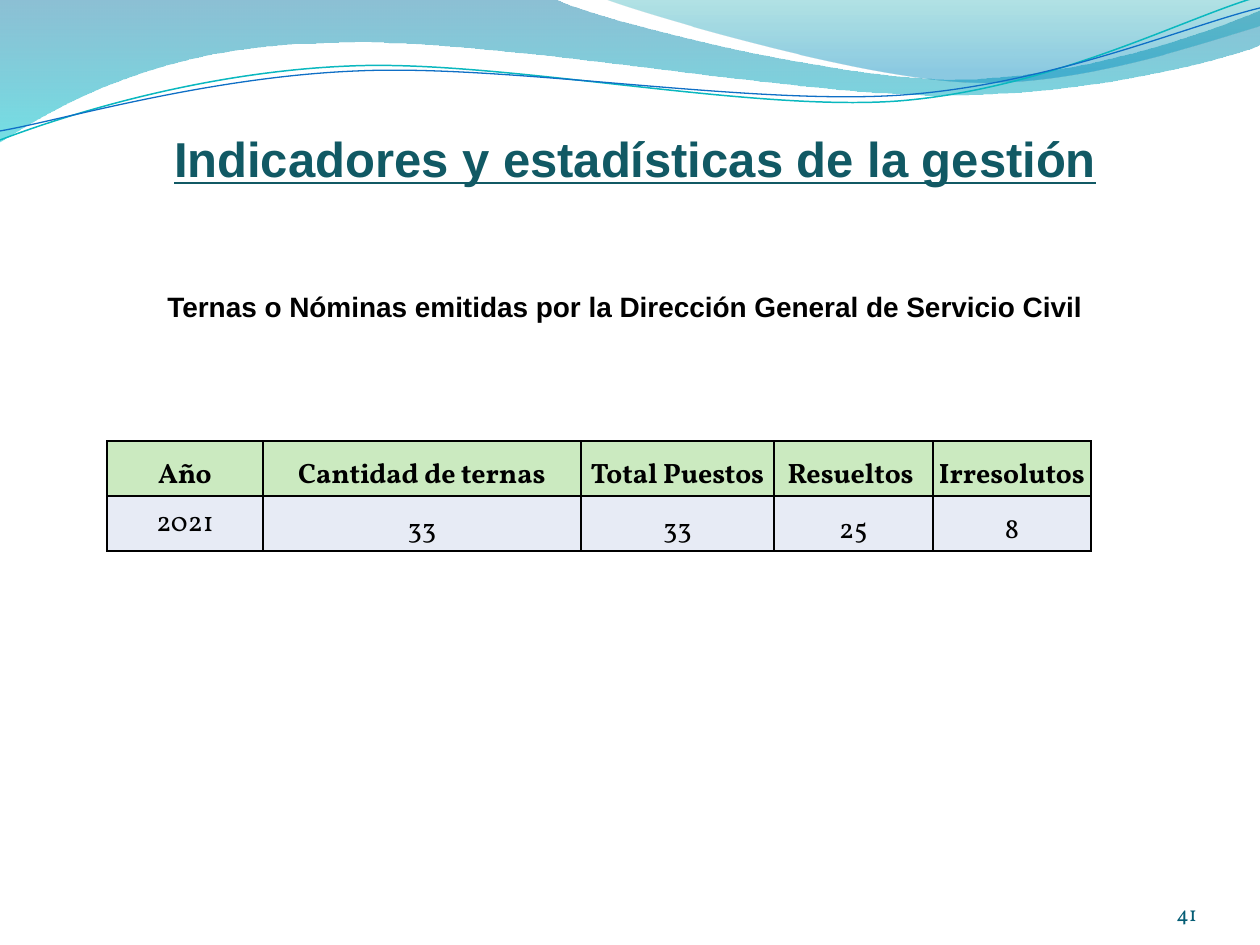
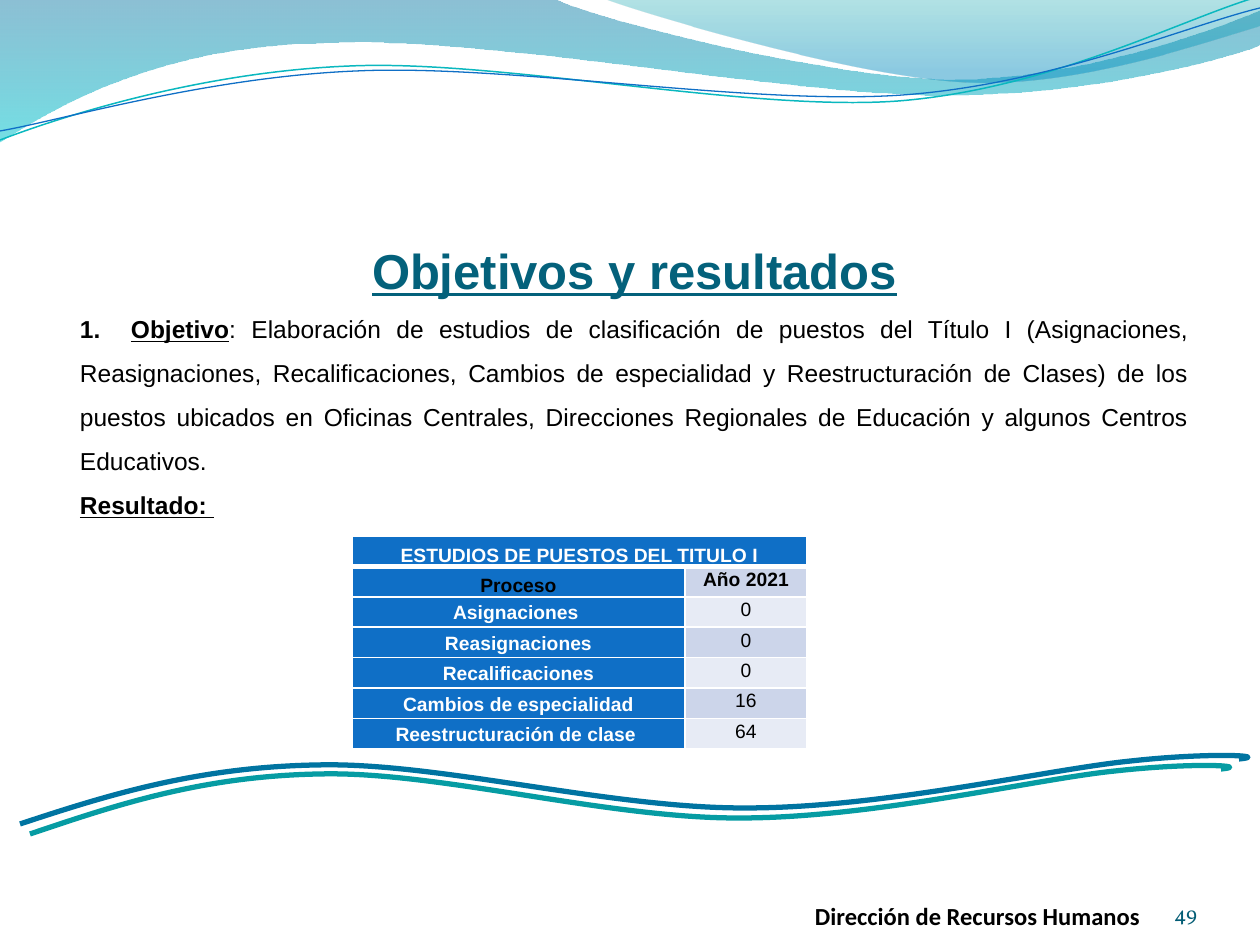
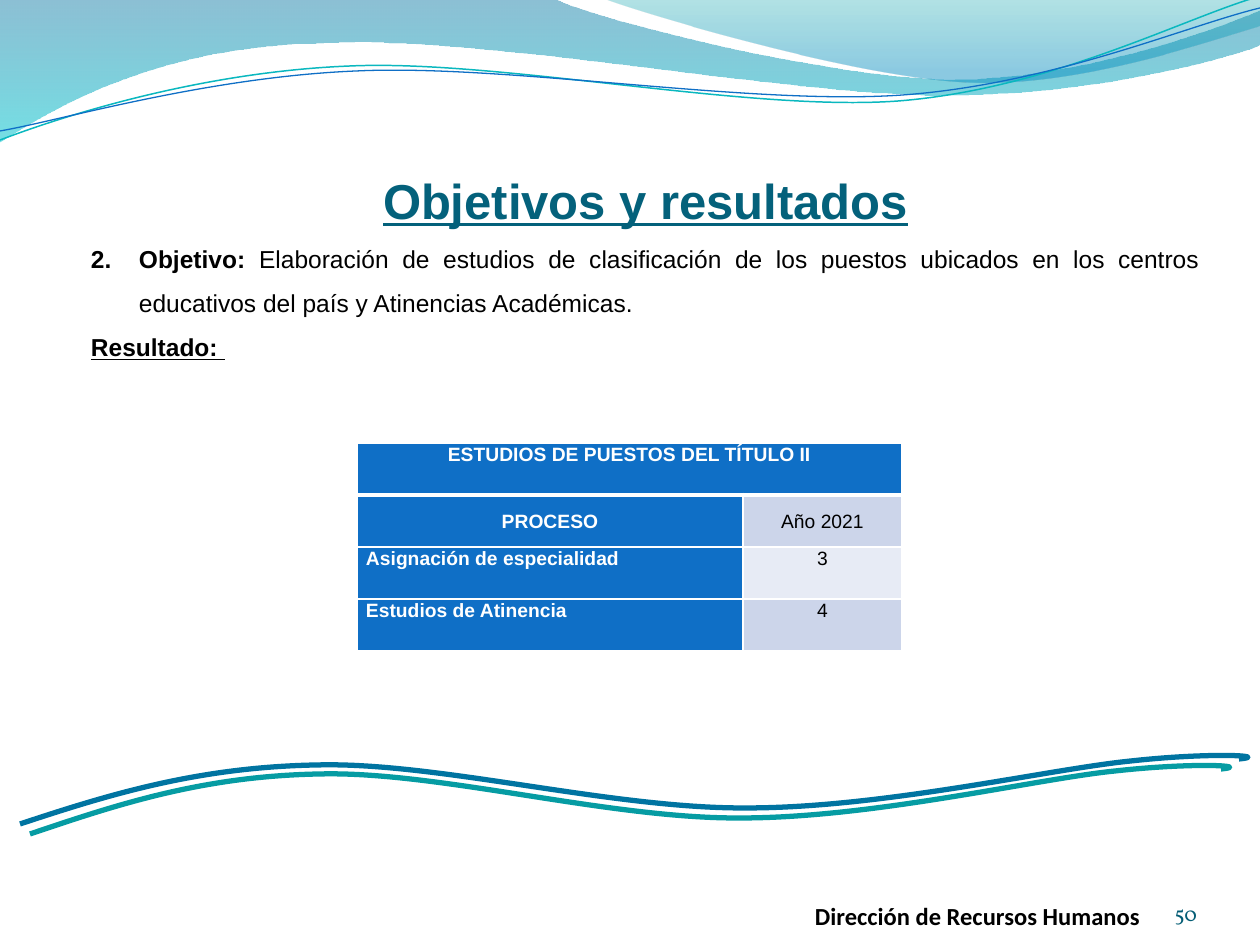
import dataclasses

import lxml.etree
import pptx
import pptx.dml.color
import pptx.enum.shapes
import pptx.enum.text
import pptx.oxml.ns
import pptx.util

ALIGN = pptx.enum.text.PP_ALIGN
ANCHOR = pptx.enum.text.MSO_ANCHOR
EMU_PER_PX = 914400 / 126


@dataclasses.dataclass(frozen=True)
class Theme:
    sans: str = "Arial"
    serif: str = "Vollkorn"
    footer_font: str = "Calibri"
    black: str = "000000"
    white: str = "FFFFFF"
    title: str = "115964"
    heading: str = "04617B"
    number: str = "045D75"
    blue: str = "0F6FC6"
    teal: str = "0AB8BF"
    deep_blue: str = "0074A1"
    deep_teal: str = "069CA3"
    green: str = "CBEAC0"
    band_dark: str = "CCD5EA"
    band_light: str = "E7EBF5"
    back_wave: tuple = ((0, "0074A1", 45), (1, "00C6CF", 55))
    front_wave: tuple = ((0, "00A1A9", 30), (0.8, "008BBF", 45))
    title_size: int = 28
    subtitle_size: int = 16
    body_size: int = 14
    number_size: int = 12
    cell_size: int = 11


THEME = Theme()


@dataclasses.dataclass(frozen=True)
class Cell:
    text: str
    fill: str
    color: str = THEME.black
    bold: bool = False
    anchor: object = ANCHOR.TOP
    align: object = ALIGN.CENTER


@dataclasses.dataclass(frozen=True)
class TableStyle:
    font: str
    size: int
    border: str
    insets: tuple
    line_spacing: float = 1.0
    space_after: int = 0


TERNAS_STYLE = TableStyle(THEME.serif, THEME.subtitle_size, THEME.black, (1, 1, 1, 0))
ESTUDIOS_I_STYLE = TableStyle(THEME.sans, THEME.cell_size, THEME.white, (9, 1, 9, 0), 1.07, 8)
ESTUDIOS_II_STYLE = dataclasses.replace(ESTUDIOS_I_STYLE, insets=(9, 0, 9, 0))

BACK_WAVE = [
    [(0, 0)], [(554, -1)],
    [(600, 21), (837, 79), (955, 79)],
    [(1075, 79), (1207, 33), (1260, 11)],
    [(1261, 45)],
    [(1239, 55), (1096, 96), (940, 95)],
    [(784, 95), (481, 35), (324, 43)],
    [(163, 45), (58, 105), (-1, 142)],
    [(0, 0)],
]
FRONT_WAVE = [
    [(604, -1)],
    [(642, 14), (859, 78), (969, 82)],
    [(1079, 87), (1211, 40), (1260, 26)],
    [(1260, 0)], [(604, -1)],
]
TOP_TEAL_LINE = [
    [(0, 140)],
    [(60, 117), (199, 72), (349, 66)],
    [(498, 59), (747, 112), (898, 101)],
    [(1050, 89), (1182, 19), (1257, -3)],
]
TOP_BLUE_LINE = [
    [(0, 131)],
    [(59, 121), (207, 77), (357, 71)],
    [(508, 64), (752, 106), (903, 95)],
    [(1053, 84), (1186, 26), (1260, 8)],
]
LOW_TEAL_LINE = [
    [(30, 834)],
    [(116, 805), (202, 776), (320, 774)],
    [(438, 771), (609, 819), (741, 818)],
    [(873, 818), (1036, 779), (1115, 771)],
    [(1196, 762), (1252, 766), (1221, 769)],
]
LOW_BLUE_LINE = [
    [(20, 824)],
    [(108, 795), (197, 767), (318, 765)],
    [(438, 762), (612, 809), (747, 808)],
    [(883, 808), (1050, 769), (1131, 761)],
    [(1213, 752), (1271, 756), (1239, 759)],
]


def px(value):
    return pptx.util.Emu(round(value * EMU_PER_PX))


def rgb(color):
    return pptx.dml.color.RGBColor.from_string(color)


def child(parent, tag, **attributes):
    return lxml.etree.SubElement(parent, pptx.oxml.ns.qn(tag), attributes)


def bend(sp, segments):
    lines = iter(list(sp.element.iter(pptx.oxml.ns.qn("a:lnTo"))))
    for segment in segments:
        curve, *controls = [next(lines) for _ in segment]
        if controls:
            curve.tag = pptx.oxml.ns.qn("a:cubicBezTo")
        for line in controls:
            curve.append(line[0])
            line.getparent().remove(line)


def add_freeform(s, segments, close):
    points = [(px(x), px(y)) for segment in segments for x, y in segment]
    builder = s.shapes.build_freeform(*points[0], scale=1.0)
    builder.add_line_segments(points[1:], close=close)
    sp = builder.convert_to_shape()
    sp.shadow.inherit = False
    bend(sp, segments[1:])
    return sp


def add_wave(s, segments, stops):
    sp = add_freeform(s, segments, True)
    sp.line.fill.background()
    sp.fill.gradient()
    sp.fill.gradient_angle = 270
    for stop, (position, color, _) in zip(sp.fill.gradient_stops, stops):
        stop.position = position
        stop.color.rgb = rgb(color)
    colors = list(sp.element.spPr.iter(pptx.oxml.ns.qn("a:srgbClr")))
    for color, (_, _, opacity) in zip(colors, stops):
        child(color, "a:alpha", val=str(opacity * 1000))


def add_curve(s, segments, color, width):
    sp = add_freeform(s, segments, False)
    sp.fill.background()
    sp.line.color.rgb = rgb(color)
    sp.line.width = pptx.util.Pt(width)


def set_insets(target, insets):
    target.margin_left, target.margin_top, target.margin_right, target.margin_bottom = map(px, insets)


def add_text(s, box, insets=(0, 0, 0, 0), anchor=ANCHOR.BOTTOM):
    tf = s.shapes.add_textbox(*map(px, box)).text_frame
    tf.word_wrap = True
    tf.vertical_anchor = anchor
    set_insets(tf, insets)
    return tf


def add_run(p, text, size, color=THEME.black, bold=False, underline=False, font=THEME.sans):
    r = p.add_run()
    r.text = text
    r.font.name = font
    r.font.size = pptx.util.Pt(size)
    r.font.color.rgb = rgb(color)
    r.font.bold = bold
    r.font.underline = underline


def add_paragraph(tf, align, first=False):
    p = tf.paragraphs[0] if first else tf.add_paragraph()
    p.alignment = align
    p.line_spacing = 1.5
    return p


def add_objective(s, box):
    tf = add_text(s, box, (13, 6, 13, 6), ANCHOR.TOP)
    p = add_paragraph(tf, ALIGN.CENTER, first=True)
    add_run(p, "Objetivos y resultados", THEME.title_size, THEME.heading, True, True)
    objective = add_paragraph(tf, ALIGN.JUSTIFY)
    p = add_paragraph(tf, ALIGN.LEFT)
    add_run(p, "Resultado: ", THEME.body_size, bold=True, underline=True)
    return objective


def set_tab(p, position):
    tabs = child(p._p.get_or_add_pPr(), "a:tabLst")
    child(tabs, "a:tab", pos=str(px(position)), algn="l")


def set_number(p, start, indent):
    pPr = p._p.get_or_add_pPr()
    pPr.set("marL", str(px(indent)))
    pPr.set("indent", str(-px(indent)))
    child(pPr, "a:buAutoNum", type="arabicPeriod", startAt=str(start))


def set_borders(cell, color, top, bottom):
    tcPr = cell._tc.get_or_add_tcPr()
    for side, width in (("L", 1), ("R", 1), ("T", top), ("B", bottom)):
        ln = child(tcPr, "a:ln" + side, w=str(pptx.util.Pt(width)))
        child(child(ln, "a:solidFill"), "a:srgbClr", val=color)


def fill_cell(cell, content, style):
    cell.fill.solid()
    cell.fill.fore_color.rgb = rgb(content.fill)
    cell.vertical_anchor = content.anchor
    set_insets(cell, style.insets)
    p = cell.text_frame.paragraphs[0]
    p.alignment = content.align
    p.line_spacing = style.line_spacing
    p.space_after = pptx.util.Pt(style.space_after)
    add_run(p, content.text, style.size, content.color, content.bold, font=style.font)


def add_grid(s, left, top, columns, height, rows, style):
    frame = s.shapes.add_table(len(rows), len(columns), px(left), px(top), px(sum(columns)), px(height))
    table = frame.table
    table.first_row = table.horz_banding = False
    for column, width in zip(table.columns, columns):
        column.width = px(width)
    spanned = len(rows[0]) == 1
    for i, row in enumerate(rows):
        table.rows[i].height = px(height / len(rows))
        for j in range(len(columns)):
            upper = 3 if spanned and i == 1 else 1
            lower = 3 if spanned and i == 0 else 1
            set_borders(table.cell(i, j), style.border, upper, lower)
        for j, content in enumerate(row):
            fill_cell(table.cell(i, j), content, style)
    if spanned:
        table.cell(0, 0).merge(table.cell(0, len(columns) - 1))


def label(text, anchor=ANCHOR.TOP, align=ALIGN.CENTER, color=THEME.white):
    return Cell(text, THEME.blue, color, True, anchor, align)


def process_rows(pairs, anchor, align):
    bands = (THEME.band_light, THEME.band_dark)
    return [[label(name, anchor, align), Cell(value, bands[i % 2])] for i, (name, value) in enumerate(pairs)]


def new_slide(prs, number):
    s = prs.slides.add_slide(prs.slide_layouts[6])
    add_wave(s, BACK_WAVE, THEME.back_wave)
    add_wave(s, FRONT_WAVE, THEME.front_wave)
    add_curve(s, TOP_TEAL_LINE, THEME.teal, 0.85)
    add_curve(s, TOP_BLUE_LINE, THEME.blue, 0.75)
    p = add_text(s, (1092, 876, 105, 50)).paragraphs[0]
    p.alignment = ALIGN.RIGHT
    add_run(p, number, THEME.number_size, THEME.number, font=THEME.serif)
    return s


def add_footer(s):
    p = add_text(s, (789, 889, 377, 41), (0, 6, 0, 0)).paragraphs[0]
    p.alignment = ALIGN.CENTER
    add_run(p, "Dirección de Recursos Humanos", THEME.body_size, bold=True, font=THEME.footer_font)
    add_curve(s, LOW_TEAL_LINE, THEME.deep_teal, 3)
    add_curve(s, LOW_BLUE_LINE, THEME.deep_blue, 3)


def add_subtitle(s, text):
    sp = s.shapes.add_shape(pptx.enum.shapes.MSO_SHAPE.RECTANGLE, *map(px, (74, 283, 1102, 81)))
    sp.shadow.inherit = False
    sp.fill.solid()
    sp.fill.fore_color.rgb = rgb(THEME.white)
    sp.line.fill.background()
    tf = sp.text_frame
    tf.word_wrap = True
    tf.vertical_anchor = ANCHOR.TOP
    p = tf.paragraphs[0]
    p.alignment = ALIGN.CENTER
    add_run(p, text, THEME.subtitle_size, bold=True)


def build_ternas(prs):
    s = new_slide(prs, "41")
    p = add_text(s, (63, 155, 1144, 89), (0, 6, 0, 60)).paragraphs[0]
    p.alignment = ALIGN.CENTER
    add_run(p, "Indicadores y estadísticas de la gestión", THEME.title_size, THEME.title, True, True)
    add_subtitle(s, "Ternas o Nóminas emitidas por la Dirección General de Servicio Civil")
    headers = ["Año", "Cantidad de ternas", "Total Puestos", "Resueltos ", "Irresolutos"]
    values = ["33", "33", "25", "8"]
    rows = [
        [Cell(text, THEME.green, bold=True, anchor=ANCHOR.BOTTOM) for text in headers],
        [Cell("2021", THEME.band_light, anchor=ANCHOR.MIDDLE)]
        + [Cell(text, THEME.band_light, anchor=ANCHOR.BOTTOM) for text in values],
    ]
    add_grid(s, 107, 441, [156, 318, 193, 159, 158], 110, rows, TERNAS_STYLE)


def build_titulo_i(prs):
    s = new_slide(prs, "49")
    add_footer(s)
    p = add_objective(s, (67, 205, 1135, 740))
    set_tab(p, 51)
    add_run(p, "1.\t", THEME.body_size, bold=True)
    add_run(p, "Objetivo", THEME.body_size, bold=True, underline=True)
    add_run(p, ": Elaboración de estudios de clasificación de puestos del Título I (Asignaciones, "
               "Reasignaciones, Recalificaciones, Cambios de especialidad y Reestructuración de Clases) "
               "de los puestos ubicados en Oficinas Centrales, Direcciones Regionales de Educación y "
               "algunos Centros Educativos.", THEME.body_size)
    pairs = [("Asignaciones ", "0"), ("Reasignaciones", "0"), ("Recalificaciones", "0"),
             ("Cambios de especialidad", "16"), ("Reestructuración de clase ", "64")]
    rows = [
        [label("ESTUDIOS DE PUESTOS DEL TITULO I", ANCHOR.BOTTOM)],
        [label("Proceso", ANCHOR.BOTTOM, color=THEME.black), Cell("Año 2021", THEME.band_dark, bold=True)],
        *process_rows(pairs, ANCHOR.MIDDLE, ALIGN.CENTER),
    ]
    add_grid(s, 352, 536, [333, 122], 213, rows, ESTUDIOS_I_STYLE)


def build_titulo_ii(prs):
    s = new_slide(prs, "50")
    add_footer(s)
    p = add_objective(s, (78, 135, 1135, 677))
    set_number(p, 2, 48)
    add_run(p, "Objetivo: ", THEME.body_size, bold=True)
    add_run(p, "Elaboración de estudios de clasificación de los puestos ubicados en los centros "
               "educativos del país y Atinencias Académicas.", THEME.body_size)
    pairs = [("Asignación de especialidad", "3"), ("Estudios de Atinencia", "4")]
    rows = [
        [label("ESTUDIOS DE PUESTOS DEL TÍTULO II")],
        [label("PROCESO", ANCHOR.MIDDLE), Cell("Año 2021", THEME.band_dark, anchor=ANCHOR.MIDDLE)],
        *process_rows(pairs, ANCHOR.TOP, ALIGN.LEFT),
    ]
    add_grid(s, 357, 443, [386, 159], 208, rows, ESTUDIOS_II_STYLE)


def main():
    prs = pptx.Presentation()
    prs.slide_width, prs.slide_height = px(1260), px(945)
    build_ternas(prs)
    build_titulo_i(prs)
    build_titulo_ii(prs)
    prs.save("out.pptx")


if __name__ == "__main__":
    main()
